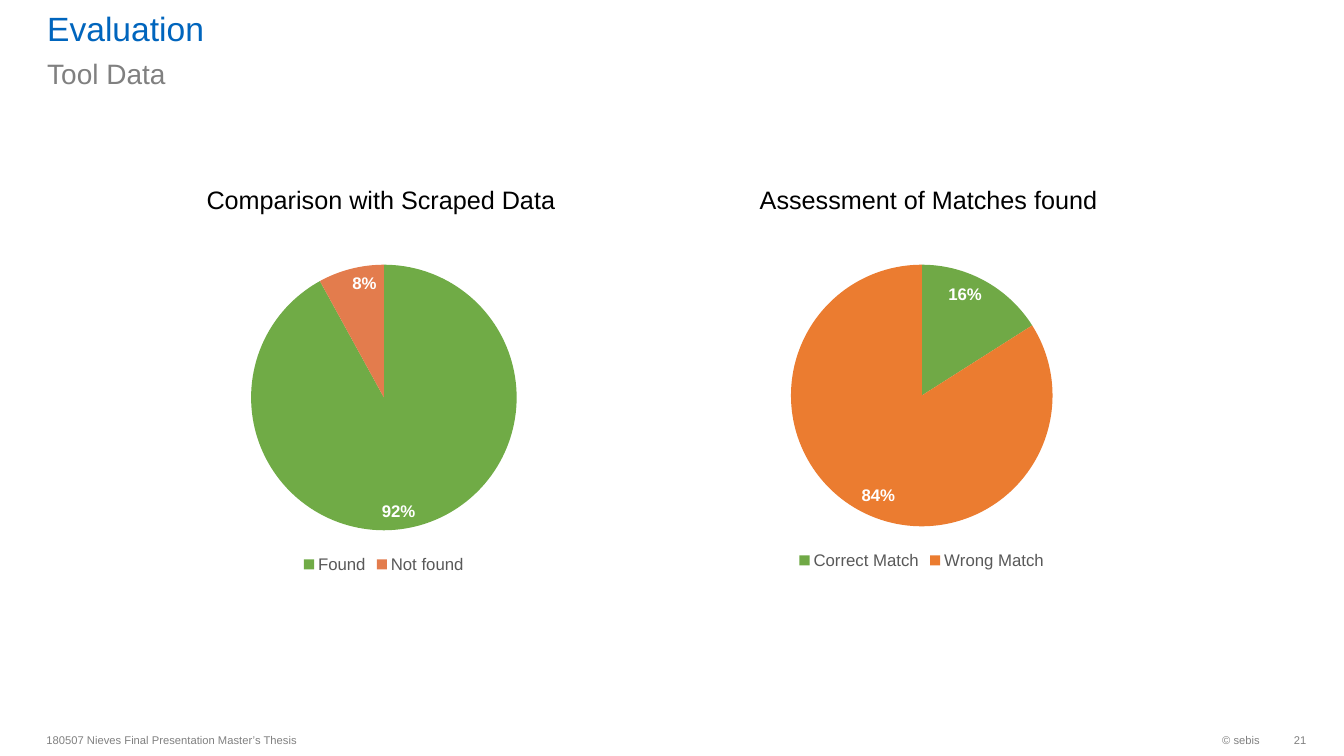
from pptx import Presentation
from pptx.chart.data import CategoryChartData
from pptx.dml.color import RGBColor
from pptx.enum.chart import XL_CHART_TYPE, XL_LABEL_POSITION, XL_LEGEND_POSITION
from pptx.enum.text import MSO_ANCHOR, PP_ALIGN
from pptx.util import Cm, Pt

PIE = XL_CHART_TYPE.PIE
INSIDE_END = XL_LABEL_POSITION.INSIDE_END
BOTTOM_LEGEND = XL_LEGEND_POSITION.BOTTOM
TOP, MIDDLE, BOTTOM = MSO_ANCHOR.TOP, MSO_ANCHOR.MIDDLE, MSO_ANCHOR.BOTTOM
LEFT, CENTER, RIGHT = PP_ALIGN.LEFT, PP_ALIGN.CENTER, PP_ALIGN.RIGHT

FONT = "Arial"
COLORS = {
    "title": "0065BD",
    "muted": "808080",
    "black": "000000",
    "white": "FFFFFF",
    "legend": "595959",
    "found": "70AB46",
    "not_found": "E37C4D",
    "correct": "70A946",
    "wrong": "EB7C30",
}


def set_font(font, size, color, bold=False):
    """Apply the slide typeface with a size, a named colour and a weight."""
    font.name = FONT
    font.size = Pt(size)
    font.bold = bold
    font.color.rgb = RGBColor.from_string(COLORS[color])


def add_text(page, text, frame, size, color, align=LEFT, anchor=TOP,
             margin_y=0.13, margin_right=0.25):
    """Add a one-paragraph text box at a frame given in centimetres."""
    box = page.shapes.add_textbox(*map(Cm, frame))
    text_frame = box.text_frame
    text_frame.word_wrap = True
    text_frame.vertical_anchor = anchor
    text_frame.margin_top = text_frame.margin_bottom = Cm(margin_y)
    text_frame.margin_left = Cm(0.25)
    text_frame.margin_right = Cm(margin_right)
    para = text_frame.paragraphs[0]
    para.text = text
    para.alignment = align
    set_font(para.font, size, color)


def add_pie(page, frame, slices):
    """Add a pie chart from (category, percentage, colour) slices."""
    data = CategoryChartData()
    data.categories = [name for name, _, _ in slices]
    data.add_series("Series 1", [value for _, value, _ in slices])
    chart = page.shapes.add_chart(PIE, *map(Cm, frame), data).chart
    chart.has_title = False
    set_font(chart.font, 12, "black")
    chart.has_legend = True
    chart.legend.position = BOTTOM_LEGEND
    chart.legend.include_in_layout = False
    set_font(chart.legend.font, 12, "legend")

    plot = chart.plots[0]
    plot.vary_by_categories = True
    series = plot.series[0]
    for index, (_, _, color) in enumerate(slices):
        fill = series.points[index].format.fill
        fill.solid()
        fill.fore_color.rgb = RGBColor.from_string(COLORS[color])
    labels = series.data_labels
    labels.show_value = False
    labels.show_percentage = True
    labels.number_format = "0%"
    labels.number_format_is_linked = False
    labels.position = INSIDE_END
    set_font(labels.font, 12, "white", bold=True)


def main():
    """Build the evaluation slide and save it."""
    deck = Presentation()
    deck.slide_width, deck.slide_height = Cm(33.87), Cm(19.05)
    page = deck.slides.add_slide(deck.slide_layouts[6])

    add_text(page, "Evaluation", (0.94, 0.23, 29.41, 0.99), 24, "title",
             anchor=BOTTOM, margin_y=0)
    add_text(page, "Tool Data", (0.94, 1.3, 29.41, 1.09), 20, "muted")

    add_text(page, "Comparison with Scraped Data", (4.7, 4.52, 9.8, 1.02),
             18, "black", CENTER)
    add_pie(page, (2.92, 6.32, 13.51, 8.23),
            [("Found", 92, "found"), ("Not found", 8, "not_found")])
    add_text(page, "Assessment of Matches found", (18.5, 4.52, 9.8, 1.02),
             18, "black", CENTER)
    add_pie(page, (16.74, 6.32, 12.98, 8.13),
            [("Correct Match", 16, "correct"), ("Wrong Match", 84, "wrong")])

    add_text(page, "180507 Nieves Final Presentation Master’s Thesis",
             (0.92, 18.25, 16, 0.8), 8, "muted", anchor=MIDDLE)
    add_text(page, "© sebis", (26.06, 18.25, 5.94, 0.8), 8, "muted", RIGHT, MIDDLE)
    add_text(page, "21", (32, 18.25, 0.92, 0.8), 8, "muted", RIGHT, MIDDLE,
             margin_right=0)
    deck.save("out.pptx")


if __name__ == "__main__":
    main()
